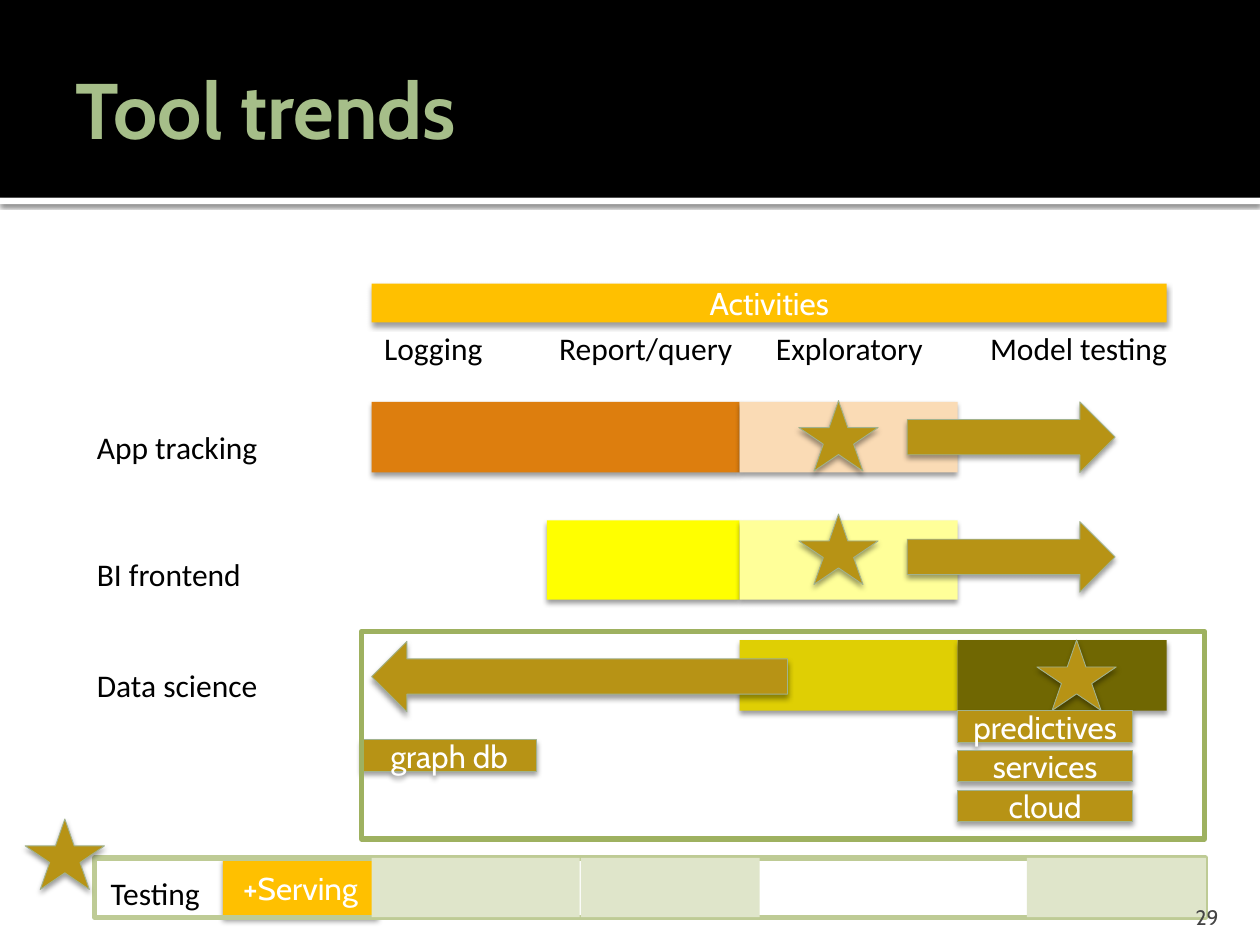
from dataclasses import dataclass
from lxml.etree import SubElement as Sub
from pptx import Presentation
from pptx.dml.color import RGBColor as Rgb
from pptx.enum.shapes import MSO_SHAPE as Kind
from pptx.enum.text import MSO_ANCHOR as Anchor, MSO_AUTO_SIZE as Auto, PP_ALIGN as Align
from pptx.oxml.ns import qn
from pptx.util import Inches, Pt


@dataclass(frozen=True)
class Theme:
    """Colours, fonts and type sizes of the slide."""
    head: str = "Cabin"
    body: str = "Calibri"
    big: int = 45
    mid: int = 18
    small: int = 12
    black: str = "000000"
    white: str = "FFFFFF"
    title: str = "A6BE89"
    grey: str = "454545"
    amber: str = "FFC000"
    gold: str = "B79315"
    edge: str = "A1B28E"
    frame: str = "9EB160"
    rim: str = "BECB95"
    pale: str = "DFE5CA"


T = Theme()
SOFT = (38, 3.1, 2)
EDGES = (0, 1.39, 2.92, 4.65, 6.31)
STAR = (0.63, 0.56)
ARROW = (1.65, 0.56)
TAG = (1.39, 0.25)


def place(box, x, y, w, h):
    """Return a part's box, offset from the corner of its region."""
    return box[0] + x, box[1] + y, w, h


def write(frame, text, font, size, color, bold=False):
    """Add one styled run to the first paragraph and return the paragraph."""
    para = frame.paragraphs[0]
    run = para.add_run()
    run.text = text
    run.font.name, run.font.size, run.font.bold = font, Pt(size), bold
    run.font.color.rgb = Rgb.from_string(color)
    return para


def shade(shape, alpha, blur, dist):
    """Give a shape a downward shadow."""
    effects = shape.element.spPr.find(qn("a:effectLst"))
    outer = Sub(effects, qn("a:outerShdw"), blurRad=str(Pt(blur)), dist=str(Pt(dist)),
                dir="5400000", rotWithShape="0")
    color = Sub(outer, qn("a:srgbClr"), val=T.black)
    Sub(color, qn("a:alpha"), val=str(alpha * 1000))


def draw(slide, box, fill=None, kind=Kind.RECTANGLE, line=None, width=0.5, shadow=SOFT, text=""):
    """Draw a preset shape with an optional centred caption."""
    shape = slide.shapes.add_shape(kind, *map(Inches, box))
    shape.shadow.inherit = False
    if fill:
        shape.fill.solid()
        shape.fill.fore_color.rgb = Rgb.from_string(fill)
    else:
        shape.fill.background()
    if line:
        shape.line.color.rgb = Rgb.from_string(line)
        shape.line.width = Pt(width)
    else:
        shape.line.fill.background()
    if shadow:
        shade(shape, *shadow)
    if text:
        shape.text_frame.vertical_anchor = Anchor.MIDDLE
        write(shape.text_frame, text, T.head, T.mid, T.white).alignment = Align.CENTER
    return shape


def mark(slide, box, kind=Kind.RECTANGLE, text=""):
    """Draw a gold trend mark: a star, an arrow or a tag."""
    draw(slide, box, T.gold, kind, T.edge, text=text)


def label(slide, box, text):
    """Add a black one-line label."""
    frame = slide.shapes.add_textbox(*map(Inches, box)).text_frame
    frame.word_wrap = False
    frame.auto_size = Auto.SHAPE_TO_FIT_TEXT
    write(frame, text, T.body, T.mid, T.black)


def header(slide, box):
    """Draw the black band and set the title over it."""
    x, y, w, h = box
    title = slide.shapes.title
    strip = draw(slide, (x, y + h, w, 0.05), T.white, shadow=(60, 2.5, 0.8))
    band = draw(slide, box, T.black, shadow=None)
    for part in (strip, band):
        title.element.addprevious(part.element)
    title.left, title.top, title.width, title.height = map(Inches, place(box, 0.5, 0.17, 9, 1.37))
    frame = title.text_frame
    frame.vertical_anchor = Anchor.MIDDLE
    frame.margin_left = Inches(0.1)
    frame.margin_right = frame.margin_top = frame.margin_bottom = Inches(0.05)
    write(frame, "Tool trends", T.head, T.big, T.title, True).alignment = Align.LEFT


def axis(slide, box):
    """Draw the activity bar with its column names below."""
    draw(slide, box, T.amber, text="Activities")
    names = (("Logging", 0, 0.99), ("Report/query", 1.39, 1.63),
             ("Exploratory", 3.11, 1.38), ("Model testing", 4.81, 1.74))
    for name, x, w in names:
        label(slide, place(box, x, box[3], w, 0.4), name)


def lane(slide, box, name, drop, spans):
    """Draw one tool's row: its name and blocks spanning columns."""
    label(slide, place(box, -2.28, drop, 1.55, 0.4), name)
    for first, last, color in spans:
        x = EDGES[first]
        draw(slide, place(box, x, 0, EDGES[last] - x, box[3]), color)


def trends(slide, box):
    """Draw the three tool rows and the marks for where they head."""
    rows = (
        ("App tracking", 0, 0.56, 0.16, ((0, 2, "DD7E0E"), (2, 3, "FADBB5"))),
        ("BI frontend", 0.94, 0.63, 0.23, ((1, 2, "FFFF00"), (2, 3, "FFFF99"))),
        ("Data science", 1.89, 0.56, 0.16, ((2, 3, "DFCF04"), (3, 4, "706702"))),
    )
    for name, y, h, drop, spans in rows:
        lane(slide, place(box, 0, y, box[2], h), name, drop, spans)
    for y in (0, 0.95):
        mark(slide, place(box, 4.25, y, *ARROW), Kind.RIGHT_ARROW)
    for x, y in ((3.39, -0.01), (3.39, 0.89), (5.28, 1.89)):
        mark(slide, place(box, x, y, *STAR), Kind.STAR_5_POINT)
    mark(slide, place(box, 0, 1.9, 2 * ARROW[0], ARROW[1]), Kind.LEFT_ARROW)


def focus(slide, box):
    """Draw the data science tags and the frame around the row."""
    mark(slide, place(box, 0, 0.86, *TAG), text="graph db")
    for i, name in enumerate(("predictives", "services", "cloud")):
        mark(slide, place(box, 4.73, 0.63 + i * 0.315, *TAG), text=name)
    draw(slide, box, line=T.frame, width=3, shadow=None)


def testing(slide, box):
    """Draw the testing strip with its star and shaded cells."""
    h = box[3]
    label(slide, place(box, 0.03, 0.08, 0.94, 0.4), "Testing")
    draw(slide, place(box, 1.02, 0, 1.23, h), T.amber, text="+Serving")
    draw(slide, box, line=T.rim, width=3, shadow=None)
    for x, w in ((2.2, 1.65), (3.86, 1.42), (7.4, 1.42)):
        draw(slide, place(box, x, 0, w, h), T.pale, shadow=None)
    mark(slide, place(box, -0.55, -0.31, *STAR), Kind.STAR_5_POINT)


def number(slide, box):
    """Add the page number."""
    frame = slide.shapes.add_textbox(*map(Inches, box)).text_frame
    frame.word_wrap = True
    frame.vertical_anchor = Anchor.BOTTOM
    frame.margin_bottom = 0
    write(frame, "29", T.head, T.small, T.grey).alignment = Align.RIGHT


def main():
    """Build the slide and save it."""
    deck = Presentation()
    deck.slide_width, deck.slide_height = Inches(10), Inches(7.5)
    slide = deck.slides.add_slide(deck.slide_layouts[5])
    header(slide, (0, 0, 10, 1.57))
    axis(slide, (2.95, 2.25, EDGES[-1], 0.31))
    trends(slide, (2.95, 3.19, EDGES[-1], 2.45))
    testing(slide, (0.75, 6.81, 8.82, 0.47))
    focus(slide, (2.87, 5.01, 6.69, 1.65))
    number(slide, (8.97, 7.08, 0.8, 0.3))
    deck.save("out.pptx")


if __name__ == "__main__":
    main()
